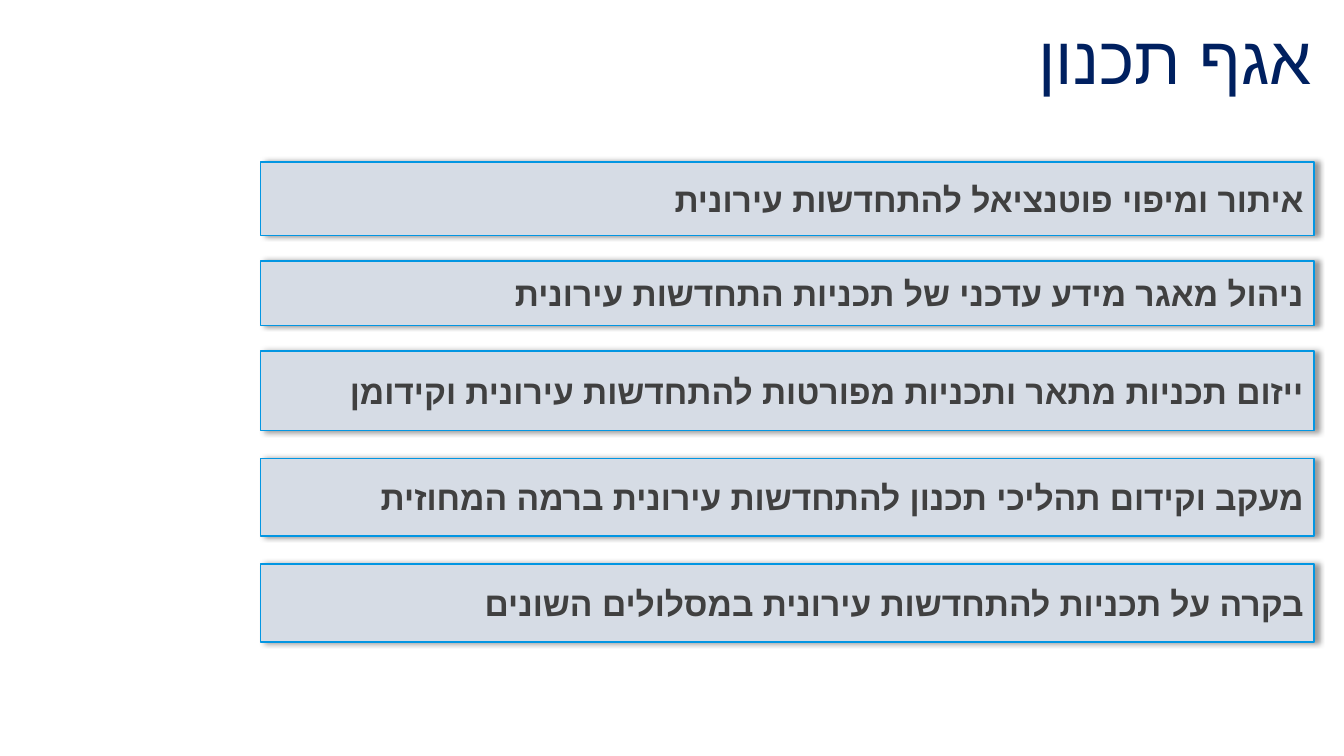
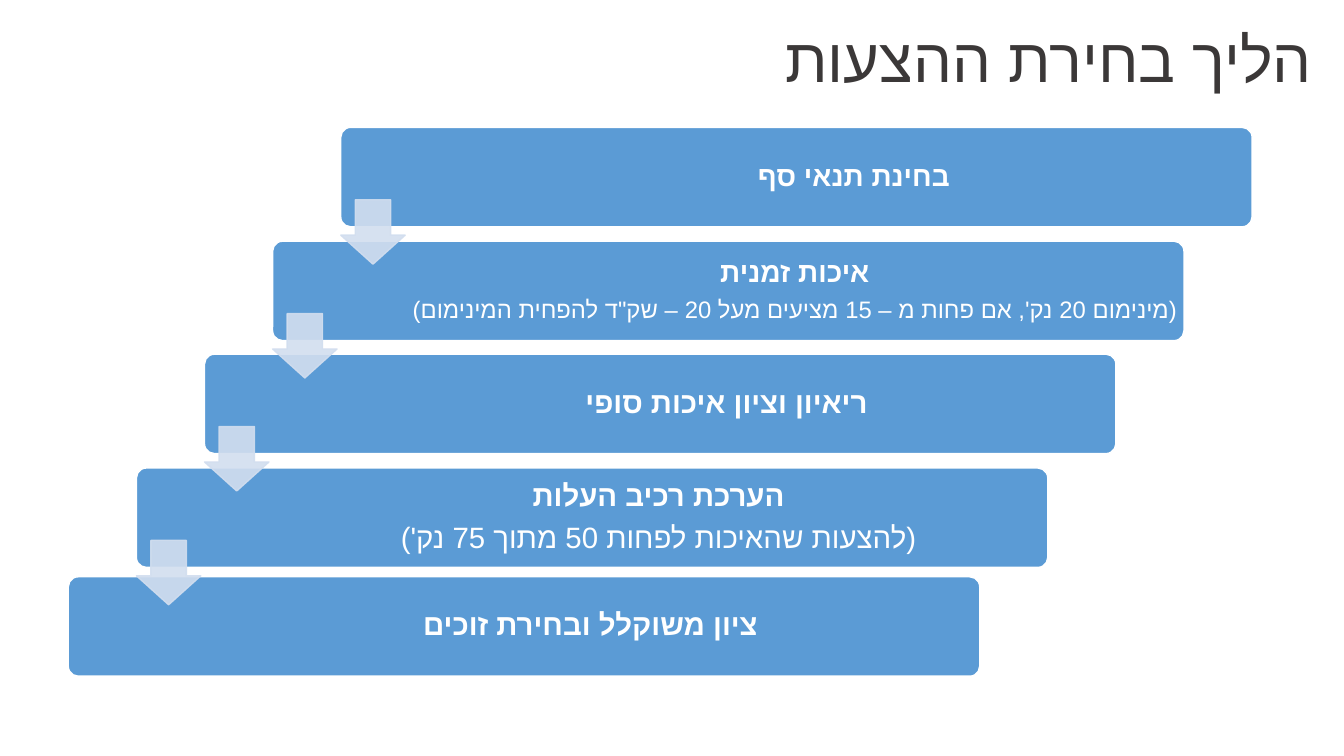
from lxml.etree import SubElement
from pptx import Presentation
from pptx.dml.color import RGBColor
from pptx.enum.shapes import MSO_SHAPE
from pptx.enum.text import MSO_ANCHOR, PP_ALIGN
from pptx.oxml.ns import qn
from pptx.util import Pt

FONT = "Arial"
NAVY, CHARCOAL, GRAY, WHITE = "002060", "3B3838", "404040", "FFFFFF"
BAR_FILL, BAR_LINE = "D6DCE5", "0396E2"
STEP_FILL, ARROW_FILL = "5B9BD5", "D2DEEF"

PLANNING_TITLE = "אגף תכנון"
# text, top, height
DUTIES = [
    ("איתור ומיפוי פוטנציאל להתחדשות עירונית", 115.7, 52.5),
    ("ניהול מאגר מידע עדכני של תכניות התחדשות עירונית", 186.5, 46),
    ("ייזום תכניות מתאר ותכניות מפורטות להתחדשות עירונית וקידומן", 250.7, 57),
    ("מעקב וקידום תהליכי תכנון להתחדשות עירונית ברמה המחוזית", 327.5, 55.5),
    ("בקרה על תכניות להתחדשות עירונית במסלולים השונים", 403, 55.5),
]
BAR_LEFT, BAR_WIDTH = 186, 752.5

SELECTION_TITLE = "הליך בחירת ההצעות"
# top, left inset, lines of (text, size, bold)
STEPS = [
    (91, 82, [("בחינת תנאי סף", 20, True)]),
    (172.3, 95, [
        ("איכות זמנית", 20, True),
        ("(מינימום 20 נק', אם פחות מ – 15 מציעים מעל 20 – שק\"ד להפחית המינימום)", 17, False),
    ]),
    (253, 95, [("ריאיון וציון איכות סופי", 21, True)]),
    (334.3, 95, [
        ("הערכת רכיב העלות", 21, True),
        ("(להצעות שהאיכות לפחות 50 מתוך 75 נק')", 21, False),
    ]),
    (412, 95, [("ציון משוקלל ובחירת זוכים", 21, True)]),
]
STEP_LEFT, STEP_SHIFT = 243.4, 48.65
STEP_WIDTH, STEP_HEIGHT = 651, 71
ARROW_SIZE, ARROW_DROP = 46, 51.7


def rgb(color):
    return RGBColor.from_string(color)


def write(p, text, size, color, bold=False, align=PP_ALIGN.RIGHT, spacing=1.0, after=0):
    """Fill a paragraph with right-to-left text."""
    p.text = text
    p.alignment = align
    p.line_spacing = spacing
    p.space_after = Pt(after)
    p.font.size = Pt(size)
    p.font.bold = bold
    p.font.name = FONT
    p.font.color.rgb = rgb(color)
    pPr = p._p.get_or_add_pPr()
    pPr.set("rtl", "1")
    SubElement(pPr.find(qn("a:defRPr")), qn("a:cs"), typeface=FONT)


def add_box(slide, kind, left, top, width, height, fill, line):
    sp = slide.shapes.add_shape(kind, Pt(left), Pt(top), Pt(width), Pt(height))
    sp.shadow.inherit = False
    sp.fill.solid()
    sp.fill.fore_color.rgb = rgb(fill)
    sp.line.color.rgb = rgb(line)
    sp.line.width = Pt(1)
    sp.text_frame.word_wrap = True
    sp.text_frame.vertical_anchor = MSO_ANCHOR.MIDDLE
    return sp


def add_shadow(sp):
    effects = sp._element.spPr.find(qn("a:effectLst"))
    shadow = SubElement(effects, qn("a:outerShdw"), blurRad=str(Pt(4)), dist=str(Pt(3)),
                        dir="0", algn="l", rotWithShape="0")
    color = SubElement(shadow, qn("a:srgbClr"), val="000000")
    SubElement(color, qn("a:alpha"), val="40000")


def set_opacity(sp, percent):
    for color in sp._element.spPr.iter(qn("a:srgbClr")):
        SubElement(color, qn("a:alpha"), val=str(percent * 1000))


def add_titled_slide(prs, title, size, color):
    slide = prs.slides.add_slide(prs.slide_layouts[6])
    tf = slide.shapes.add_textbox(Pt(116.6), Pt(-7.2), Pt(828), Pt(104.4)).text_frame
    tf.word_wrap = True
    tf.vertical_anchor = MSO_ANCHOR.MIDDLE
    write(tf.paragraphs[0], title, size, color, spacing=0.9)
    return slide


def build_planning(prs):
    slide = add_titled_slide(prs, PLANNING_TITLE, 48, NAVY)
    for text, top, height in DUTIES:
        bar = add_box(slide, MSO_SHAPE.RECTANGLE, BAR_LEFT, top, BAR_WIDTH, height,
                      BAR_FILL, BAR_LINE)
        add_shadow(bar)
        write(bar.text_frame.paragraphs[0], text, 24, GRAY, bold=True)


def build_selection(prs):
    slide = add_titled_slide(prs, SELECTION_TITLE, 44, CHARCOAL)
    lefts = [STEP_LEFT - i * STEP_SHIFT for i in range(len(STEPS))]
    for left, (top, inset, lines) in zip(lefts, STEPS):
        step = add_box(slide, MSO_SHAPE.ROUNDED_RECTANGLE, left, top, STEP_WIDTH, STEP_HEIGHT,
                       STEP_FILL, WHITE)
        step.adjustments[0] = 0.1
        tf = step.text_frame
        tf.margin_left, tf.margin_right = Pt(inset), Pt(0)
        for i, (text, size, bold) in enumerate(lines):
            p = tf.add_paragraph() if i else tf.paragraphs[0]
            write(p, text, size, WHITE, bold, PP_ALIGN.CENTER, spacing=0.9, after=7)

    for left, (top, *_) in zip(lefts, STEPS[:-1]):
        arrow = add_box(slide, MSO_SHAPE.DOWN_ARROW, left, top + ARROW_DROP,
                        ARROW_SIZE, ARROW_SIZE, ARROW_FILL, ARROW_FILL)
        arrow.adjustments[0], arrow.adjustments[1] = 0.55, 0.45
        set_opacity(arrow, 90)


def main():
    prs = Presentation()
    prs.slide_width, prs.slide_height = Pt(960), Pt(540)
    build_planning(prs)
    build_selection(prs)
    prs.save("out.pptx")


if __name__ == "__main__":
    main()
